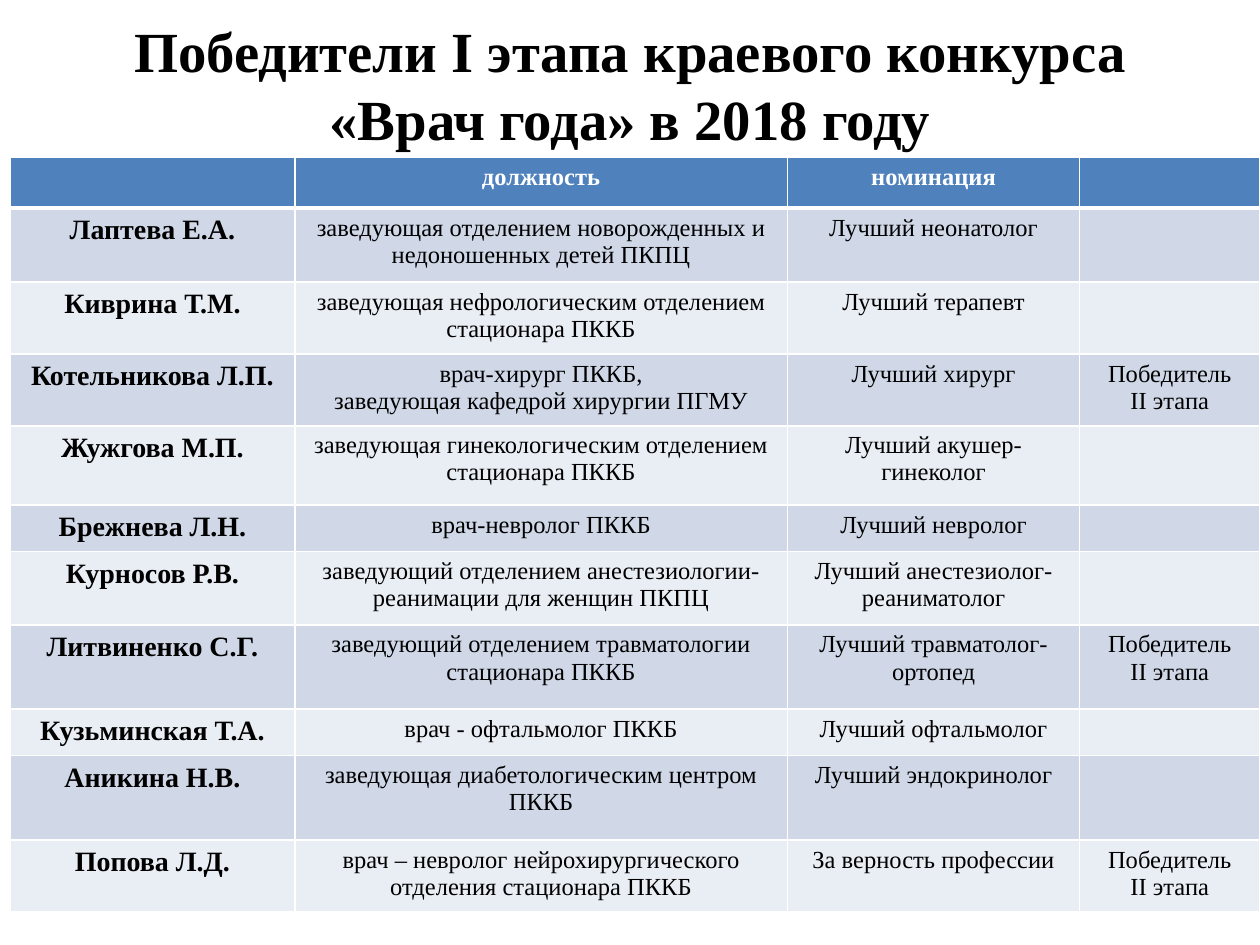
from dataclasses import dataclass

from lxml.etree import SubElement
from pptx import Presentation
from pptx.dml.color import RGBColor
from pptx.enum.text import MSO_ANCHOR, PP_ALIGN
from pptx.oxml.ns import qn
from pptx.util import Inches, Pt


@dataclass(frozen=True)
class Theme:
    font: str = "Times New Roman"
    ink: str = "000000"
    white: str = "FFFFFF"
    header: str = "4F81BD"
    bands: tuple = ("D0D8E8", "E9EDF4")
    title_size: float = 32.4
    name_size: int = 16
    body_size: int = 14
    rule: int = 1
    header_rule: int = 3


THEME = Theme()

TITLE = "Победители I этапа краевого конкурса «Врач года» в 2018 году"
SECOND_STAGE = "Победитель\nII этапа"
HEADINGS = ("", "должность", "номинация", "")
WINNERS = (
    ("Лаптева Е.А.", "заведующая отделением новорожденных и недоношенных детей ПКПЦ",
     "Лучший неонатолог", ""),
    ("Киврина Т.М.", "заведующая нефрологическим отделением стационара ПККБ",
     "Лучший терапевт", ""),
    ("Котельникова Л.П.", "врач-хирург ПККБ,\nзаведующая кафедрой хирургии ПГМУ",
     "Лучший хирург", SECOND_STAGE),
    ("Жужгова М.П.", "заведующая гинекологическим отделением стационара ПККБ",
     "Лучший акушер-гинеколог", ""),
    ("Брежнева Л.Н.", "врач-невролог ПККБ", "Лучший невролог", ""),
    ("Курносов Р.В.", "заведующий отделением анестезиологии-реанимации для женщин ПКПЦ",
     "Лучший анестезиолог-реаниматолог", ""),
    ("Литвиненко С.Г.", "заведующий отделением травматологии стационара ПККБ",
     "Лучший травматолог-ортопед", SECOND_STAGE),
    ("Кузьминская Т.А.", "врач - офтальмолог ПККБ", "Лучший офтальмолог", ""),
    ("Аникина Н.В.", "заведующая диабетологическим центром ПККБ",
     "Лучший эндокринолог", ""),
    ("Попова Л.Д.", "врач – невролог нейрохирургического отделения стационара ПККБ",
     "За верность профессии", SECOND_STAGE),
)
COLUMN_WIDTHS = (2.26, 3.91, 2.32, 1.43)
ROW_HEIGHTS = (0.4, 0.59, 0.57, 0.57, 0.63, 0.37, 0.58, 0.67, 0.37, 0.67, 0.57)


def write(frame, text, size=THEME.body_size, color=THEME.ink, bold=False):
    for index, line in enumerate(text.split("\n")):
        paragraph = frame.add_paragraph() if index else frame.paragraphs[0]
        paragraph.alignment = PP_ALIGN.CENTER
        if not line:
            SubElement(paragraph._p, qn("a:endParaRPr"), sz=str(size * 100))
            continue
        run = paragraph.add_run()
        run.text = line
        run.font.name = THEME.font
        run.font.size = Pt(size)
        run.font.bold = bold
        run.font.color.rgb = RGBColor.from_string(color)


def paint_cell(cell, fill, top_rule, bottom_rule):
    properties = cell._tc.get_or_add_tcPr()
    rules = {"lnL": THEME.rule, "lnR": THEME.rule, "lnT": top_rule, "lnB": bottom_rule}
    for side, width in rules.items():
        line = SubElement(properties, qn(f"a:{side}"), w=str(Pt(width)))
        SubElement(SubElement(line, qn("a:solidFill")), qn("a:srgbClr"), val=THEME.white)
    cell.fill.solid()
    cell.fill.fore_color.rgb = RGBColor.from_string(fill)


def place_title(slide, left, top, width, height):
    title = slide.shapes.title
    title.left, title.top, title.width, title.height = left, top, width, height
    title.text_frame.word_wrap = True
    title.text_frame.vertical_anchor = MSO_ANCHOR.MIDDLE
    write(title.text_frame, TITLE, size=THEME.title_size, bold=True)


def place_winners(slide, left, top, width, height):
    rows = (HEADINGS, *WINNERS)
    table = slide.shapes.add_table(
        len(rows), len(HEADINGS), left, top, width, height).table
    for column, column_width in zip(table.columns, COLUMN_WIDTHS):
        column.width = Inches(column_width)
    for row, row_height in zip(table.rows, ROW_HEIGHTS):
        row.height = Inches(row_height)

    for r, texts in enumerate(rows):
        is_header = r == 0
        fill = THEME.header if is_header else THEME.bands[(r - 1) % 2]
        for c, text in enumerate(texts):
            cell = table.cell(r, c)
            is_name = c == 0 and not is_header
            paint_cell(cell, fill,
                       top_rule=THEME.header_rule if r == 1 else THEME.rule,
                       bottom_rule=THEME.header_rule if is_header else THEME.rule)
            write(cell.text_frame, text,
                  size=THEME.name_size if is_name else THEME.body_size,
                  color=THEME.white if is_header else THEME.ink,
                  bold=is_header or is_name)


def main():
    deck = Presentation()
    deck.slide_width, deck.slide_height = Inches(10), Inches(7.5)
    slide = deck.slides.add_slide(deck.slide_layouts[5])
    place_title(slide, Inches(0.5), Inches(0.27), Inches(9), Inches(0.79))
    place_winners(slide, Inches(0.08), Inches(1.25),
                  Inches(sum(COLUMN_WIDTHS)), Inches(sum(ROW_HEIGHTS)))
    deck.save("out.pptx")


if __name__ == "__main__":
    main()
